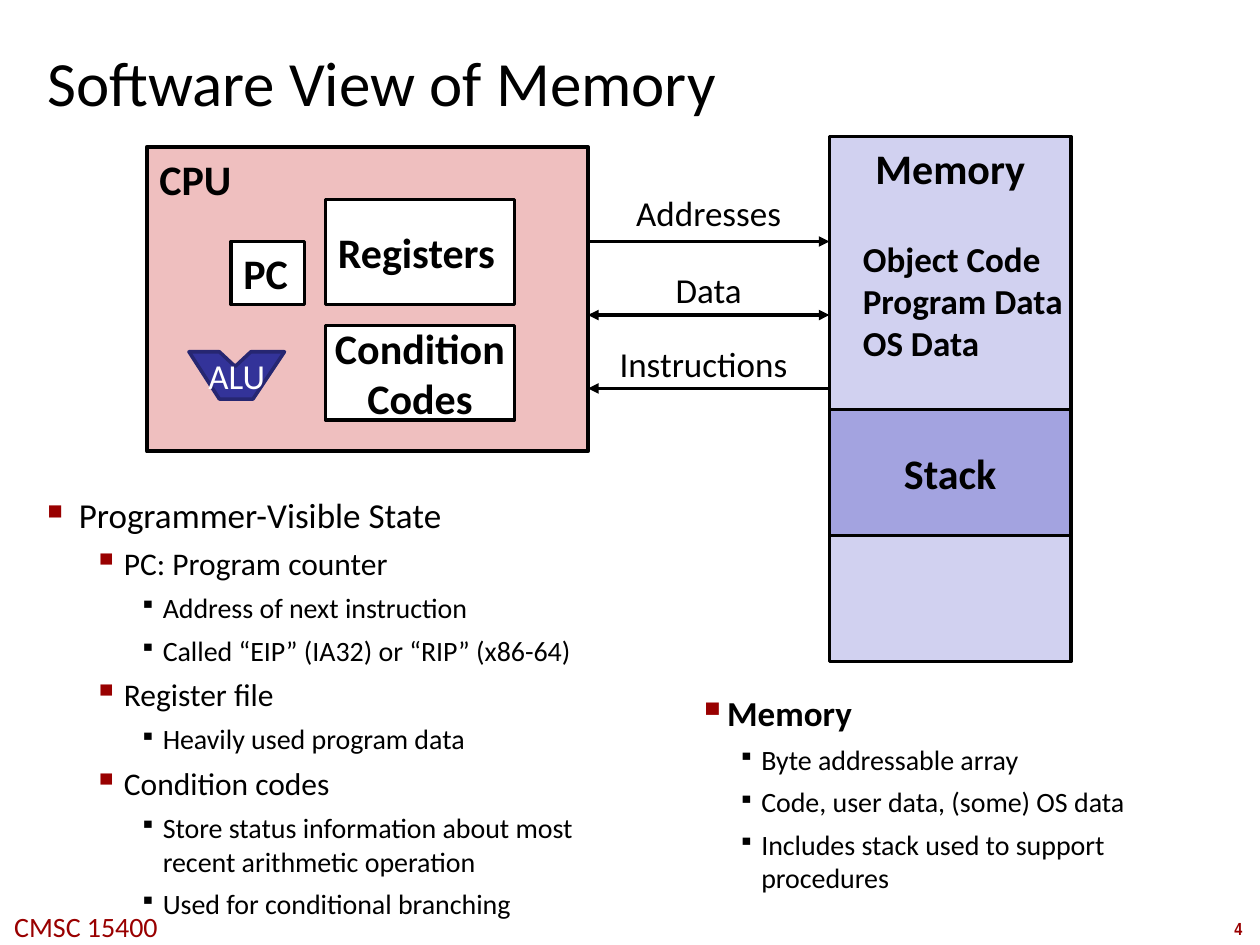
from lxml.etree import SubElement as Sub
from pptx import Presentation
from pptx.dml.color import RGBColor
from pptx.enum.shapes import MSO_CONNECTOR as Link, MSO_SHAPE as Kind
from pptx.enum.text import MSO_ANCHOR as Anchor, MSO_AUTO_SIZE as Fit, PP_ALIGN as Align
from pptx.oxml.ns import qn
from pptx.util import Pt

PX = 7620
BLACK, RED, WHITE = "000000", "990000", "FFFFFF"
HEAD = {"size": Pt(24), "bold": True}
LABEL = {"size": Pt(20)}
LEVELS = [
    {"mark": "■", "hue": RED, "scale": 60, "size": 20, "gap": 6},
    {"mark": "▪", "hue": RED, "scale": 110, "size": 18, "gap": 5},
    {"mark": "▪", "hue": BLACK, "scale": 80, "size": 16, "gap": 5},
]
STATE = [
    (0, "Programmer-Visible State"),
    (1, "PC: Program counter"),
    (2, "Address of next instruction"),
    (2, "Called “EIP” (IA32) or “RIP” (x86-64)"),
    (1, "Register file"),
    (2, "Heavily used program data"),
    (1, "Condition codes"),
    (2, "Store status information about most recent arithmetic operation"),
    (2, "Used for conditional branching"),
]
STORE = [
    (1, "Memory"),
    (2, "Byte addressable array"),
    (2, "Code, user data, (some) OS data"),
    (2, "Includes stack used to support procedures"),
]


def emu(*vals):
    """Turn px lengths into EMU."""
    return [val * PX for val in vals]


def rgb(hue):
    """Return the colour of a hex string."""
    return RGBColor.from_string(hue)


def put(item, vals):
    """Set attributes from a dict."""
    for key, val in vals.items():
        setattr(item, key, val)


def style(run, form, hue=BLACK):
    """Format a run."""
    put(run.font, {"name": "Calibri", **form})
    run.font.color.rgb = rgb(hue)


def write(shape, lines, form, hue=BLACK, align=Align.LEFT, **frame):
    """Write plain lines into a shape."""
    body = shape.text_frame
    put(body, {"word_wrap": True, "vertical_anchor": Anchor.TOP, **frame})
    body.text = "\n".join(lines)
    for para in body.paragraphs:
        para.alignment = align
        style(para.runs[0], form, hue)


def paint(shape, fill, line=BLACK, width=2):
    """Give a shape its fill and outline."""
    shape.shadow.inherit = False
    shape.fill.solid()
    shape.fill.fore_color.rgb = rgb(fill)
    shape.line.color.rgb = rgb(line)
    shape.line.width = Pt(width)


def block(slide, box, fill, width=2):
    """Add a filled rectangle."""
    shape = slide.shapes.add_shape(Kind.RECTANGLE, *emu(*box))
    paint(shape, fill, width=width)
    return shape


def note(slide, box, lines, form, **rest):
    """Add a text box."""
    write(slide.shapes.add_textbox(*emu(*box)), lines, form, **rest)


def arrow(slide, left, right, top, ends):
    """Add a level arrow with the given ends."""
    line = slide.shapes.add_connector(Link.STRAIGHT, *emu(left, top, right, top))
    line.line.color.rgb = rgb(BLACK)
    line.line.width = Pt(2)
    props = line._element.spPr
    for end in ends:
        Sub(props.find(qn("a:ln")), qn(f"a:{end}"), type="triangle")
    Sub(props, qn("a:effectLst"))


def bullet(para, level, indent):
    """Give a paragraph its bullet and hanging indent."""
    look = LEVELS[level]
    props = para._p.get_or_add_pPr()
    left, hang = emu(*indent)
    props.set("marL", str(left))
    props.set("indent", str(-hang))
    Sub(Sub(props, qn("a:buClr")), qn("a:srgbClr"), val=look["hue"])
    Sub(props, qn("a:buSzPct"), val=str(look["scale"] * 1000))
    Sub(props, qn("a:buChar"), char=look["mark"])


def outline(slide, box, items, indents, lead):
    """Add a bulleted list whose first line has the lead format."""
    body = slide.shapes.add_textbox(*emu(*box)).text_frame
    put(body, {"word_wrap": True, **pad(5)})
    for num, (level, text) in enumerate(items):
        para = body.add_paragraph() if num else body.paragraphs[0]
        bullet(para, level, indents[level])
        para.level = level
        para.space_before = Pt(LEVELS[level]["gap"] if num else 0)
        run = para.add_run()
        run.text = text
        style(run, {"size": Pt(LEVELS[level]["size"])} if num else lead)


def pad(size):
    """Return equal margins on all sides."""
    return {f"margin_{side}": size * PX for side in ("left", "top", "right", "bottom")}


def title(slide, box):
    """Place the slide title."""
    shape = slide.shapes.title
    put(shape, dict(zip(("left", "top", "width", "height"), emu(*box))))
    write(shape, ["Software View of Memory"], {"size": Pt(36)},
          vertical_anchor=Anchor.MIDDLE, auto_size=Fit.NONE, **pad(5))


def cpu(slide, box):
    """Draw the processor and its parts."""
    left, top = box[:2]
    write(block(slide, box, "EFBFBF", 2.25), ["CPU"], HEAD)
    parts = [
        ((80, 90, 70, 60), ["PC"], Align.LEFT),
        ((170, 50, 180, 100), ["Registers"], Align.LEFT),
        ((170, 170, 180, 90), ["Condition", "Codes"], Align.CENTER),
    ]
    for (x, y, wide, high), lines, align in parts:
        write(block(slide, (left + x, top + y, wide, high), WHITE), lines, HEAD,
              align=align, vertical_anchor=Anchor.MIDDLE, word_wrap=False)
    alu(slide, (left + 40, top + 195, 91, 45))


def alu(slide, box):
    """Draw the notched arithmetic unit."""
    left, top, wide, high = box
    ends = [(29, high), (61, high), (wide, 0), (59, 0), (44, 14), (29, 0)]
    path = slide.shapes.build_freeform(left, top, scale=PX)
    path.add_line_segments([(left + x, top + y) for x, y in ends], close=True)
    shape = path.convert_to_shape()
    paint(shape, "333399", "262671")
    write(shape, ["ALU"], LABEL, WHITE, Align.CENTER, vertical_anchor=Anchor.MIDDLE)


def memory(slide, box):
    """Draw the memory column with its stack."""
    left, top, wide, high = box
    write(block(slide, box, "D1D1F0"), ["Memory"], HEAD, align=Align.CENTER,
          word_wrap=False)
    note(slide, (left + 20, top + 90, wide, 133),
         ["Object Code", "Program Data", "OS Data"], {**LABEL, "bold": True})
    write(block(slide, (left, top + 260, wide, 120), "A3A3E0"), ["Stack"], HEAD,
          align=Align.CENTER, vertical_anchor=Anchor.MIDDLE, word_wrap=False)


def buses(slide, box):
    """Draw the labelled arrows between processor and memory."""
    left, top, wide, high = box
    rows = [
        ("Addresses", 0, wide, ["tailEnd"]),
        ("Data", 4, wide, ["headEnd", "tailEnd"]),
        ("Instructions", 4, wide - 10, ["headEnd"]),
    ]
    for num, (text, drop, span, ends) in enumerate(rows):
        base = top + num * high // 2
        arrow(slide, left, left + wide, base, ends)
        note(slide, (left, base - 54 + drop, span, 52), [text], LABEL,
             align=Align.CENTER)


def footer(slide, box):
    """Place the course name and the page number."""
    left, top, wide, high = box
    note(slide, (left - 3, top, 170, high), ["CMSC 15400"], {"size": Pt(16)},
         hue=RED, align=Align.CENTER, word_wrap=False)
    note(slide, (left + wide - 41, top + 8, 41, 32), ["4"],
         {"name": "Arial Narrow", "size": Pt(10), "bold": True},
         hue=RED, align=Align.CENTER, word_wrap=False)


def main():
    """Build and save the slide."""
    deck = Presentation()
    deck.slide_width, deck.slide_height = emu(1200, 900)
    slide = deck.slides.add_slide(deck.slide_layouts[5])
    title(slide, (40, 40, 948, 75))
    cpu(slide, (140, 140, 420, 290))
    memory(slide, (790, 130, 230, 500))
    buses(slide, (560, 230, 230, 140))
    outline(slide, (40, 465, 572, 405), STATE,
            [(30, 30), (73, 29), (110, 22)], LABEL)
    outline(slide, (645, 654, 535, 206), STORE,
            [None, (38, 23), (75, 22)], {**LABEL, "bold": True})
    footer(slide, (0, 860, 1200, 44))
    deck.save("out.pptx")


if __name__ == "__main__":
    main()
